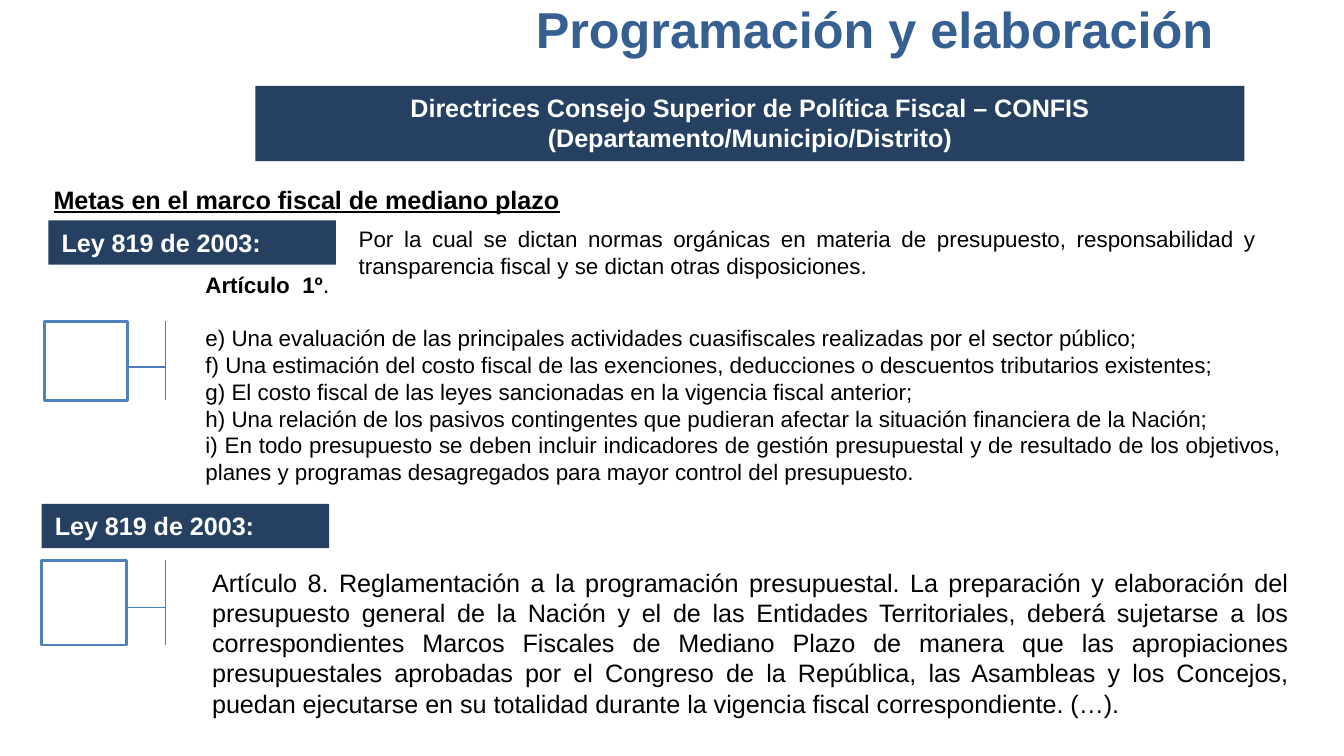
import dataclasses

import lxml.etree
import pptx
import pptx.dml.color
import pptx.enum.shapes
import pptx.enum.text
import pptx.oxml.ns
import pptx.util

Inches = pptx.util.Inches
Pt = pptx.util.Pt
Align = pptx.enum.text.PP_ALIGN
Anchor = pptx.enum.text.MSO_ANCHOR


def rgb(value):
    return pptx.dml.color.RGBColor.from_string(value)


@dataclasses.dataclass(frozen=True)
class Theme:
    font: str = "Arial"
    title_color: str = "376092"
    banner_color: str = "254061"
    banner_text: str = "FFFFFF"
    text_color: str = "000000"
    box_line: str = "4F81BD"
    bracket_line: str = "4B7EBC"
    title_size: float = 27
    large: float = 13.5
    small: float = 12


class SlideBuilder:
    def __init__(self, page, theme):
        self.page = page
        self.theme = theme

    def style(self, para, size, color, align, bold=None):
        para.alignment = align
        para.font.name = self.theme.font
        para.font.size = Pt(size)
        para.font.color.rgb = rgb(color)
        para.font.bold = bold

    def title(self, text, left, top, width, height):
        box = self.page.shapes.title
        box.left, box.top = Inches(left), Inches(top)
        box.width, box.height = Inches(width), Inches(height)
        frame = box.text_frame
        frame.text = text
        frame.auto_size = pptx.enum.text.MSO_AUTO_SIZE.NONE
        frame.vertical_anchor = Anchor.MIDDLE
        self.style(frame.paragraphs[0], self.theme.title_size,
                   self.theme.title_color, Align.RIGHT, True)

    def rectangle(self, left, top, width, height):
        box = self.page.shapes.add_shape(
            pptx.enum.shapes.MSO_SHAPE.RECTANGLE,
            Inches(left), Inches(top), Inches(width), Inches(height))
        box.shadow.inherit = False
        return box

    def banner(self, text, left, top, width, height, align):
        box = self.rectangle(left, top, width, height)
        box.fill.solid()
        box.fill.fore_color.rgb = rgb(self.theme.banner_color)
        box.line.fill.background()
        frame = box.text_frame
        frame.word_wrap = True
        frame.vertical_anchor = Anchor.TOP
        frame.text = text
        self.style(frame.paragraphs[0], self.theme.large,
                   self.theme.banner_text, align, True)

    def text(self, lines, left, top, width, height, size, align=Align.JUSTIFY):
        box = self.page.shapes.add_textbox(
            Inches(left), Inches(top), Inches(width), Inches(height))
        frame = box.text_frame
        frame.word_wrap = True
        frame.text = "\n".join(lines)
        for para in frame.paragraphs:
            self.style(para, size, self.theme.text_color, align)
        return frame.paragraphs

    def line(self, x1, y1, x2, y2):
        connector = self.page.shapes.add_connector(
            pptx.enum.shapes.MSO_CONNECTOR.STRAIGHT,
            Inches(x1), Inches(y1), Inches(x2), Inches(y2))
        connector.line.color.rgb = rgb(self.theme.bracket_line)
        connector.line.width = Pt(0.75)
        lxml.etree.SubElement(connector._element.spPr,
                              pptx.oxml.ns.qn("a:effectLst"))

    def bracket(self, left, top, width, height, bar_x, link_y):
        box = self.rectangle(left, top, width, height)
        box.fill.background()
        box.line.color.rgb = rgb(self.theme.box_line)
        box.line.width = Pt(1.5)
        self.line(bar_x, top, bar_x, top + height)
        self.line(bar_x, link_y, left + width, link_y)


def main():
    deck = pptx.Presentation()
    deck.slide_width = Inches(10)
    deck.slide_height = deck.slide_width * 9 // 16
    theme = Theme()
    slide = SlideBuilder(deck.slides.add_slide(deck.slide_layouts[5]), theme)

    slide.title("Programación y elaboración", 3.75, -0.05, 5.38, 0.52)
    slide.banner("Directrices Consejo Superior de Política Fiscal – CONFIS "
                 "(Departamento/Municipio/Distrito)",
                 1.9, 0.64, 7.36, 0.56, Align.CENTER)

    heading = slide.text(["Metas en el marco fiscal de mediano plazo"],
                         0.3, 1.32, 4.41, 0.33, theme.large, Align.LEFT)[0]
    heading.font.bold = True
    heading.font.underline = True

    for left, top in ((0.36, 1.64), (0.31, 3.75)):
        slide.banner("Ley 819 de 2003:", left, top, 2.14, 0.33, Align.JUSTIFY)
    slide.bracket(0.33, 2.39, 0.62, 0.59, 1.23, 2.73)
    slide.bracket(0.31, 4.17, 0.63, 0.63, 1.23, 4.52)

    slide.text(["Por la cual se dictan normas orgánicas en materia de presupuesto, "
                "responsabilidad y transparencia fiscal y se dictan otras disposiciones."],
               2.57, 1.63, 6.88, 0.5, theme.small)

    article = slide.text([
        "Artículo  1º",
        "e) Una evaluación de las principales actividades cuasifiscales realizadas "
        "por el sector público;",
        "f) Una estimación del costo fiscal de las exenciones, deducciones o "
        "descuentos tributarios existentes;",
        "g) El costo fiscal de las leyes sancionadas en la vigencia fiscal anterior;",
        "h) Una relación de los pasivos contingentes que pudieran afectar la "
        "situación financiera de la Nación;",
        "i) En todo presupuesto se deben incluir indicadores de gestión presupuestal "
        "y de resultado de los objetivos, planes y programas desagregados para mayor "
        "control del presupuesto.",
    ], 1.43, 1.97, 8.21, 1.72, theme.small)[0]
    article.runs[0].font.bold = True
    article.add_run().text = "."
    article.space_after = Pt(13.8)

    slide.text(["Artículo 8. Reglamentación a la programación presupuestal. La "
                "preparación y elaboración del presupuesto general de la Nación y el "
                "de las Entidades Territoriales, deberá sujetarse a los "
                "correspondientes Marcos Fiscales de Mediano Plazo de manera que las "
                "apropiaciones presupuestales aprobadas por el Congreso de la "
                "República, las Asambleas y los Concejos, puedan ejecutarse en su "
                "totalidad durante la vigencia fiscal correspondiente. (…)."],
               1.48, 4.17, 8.21, 1.24, theme.large)

    deck.save("out.pptx")


if __name__ == "__main__":
    main()
